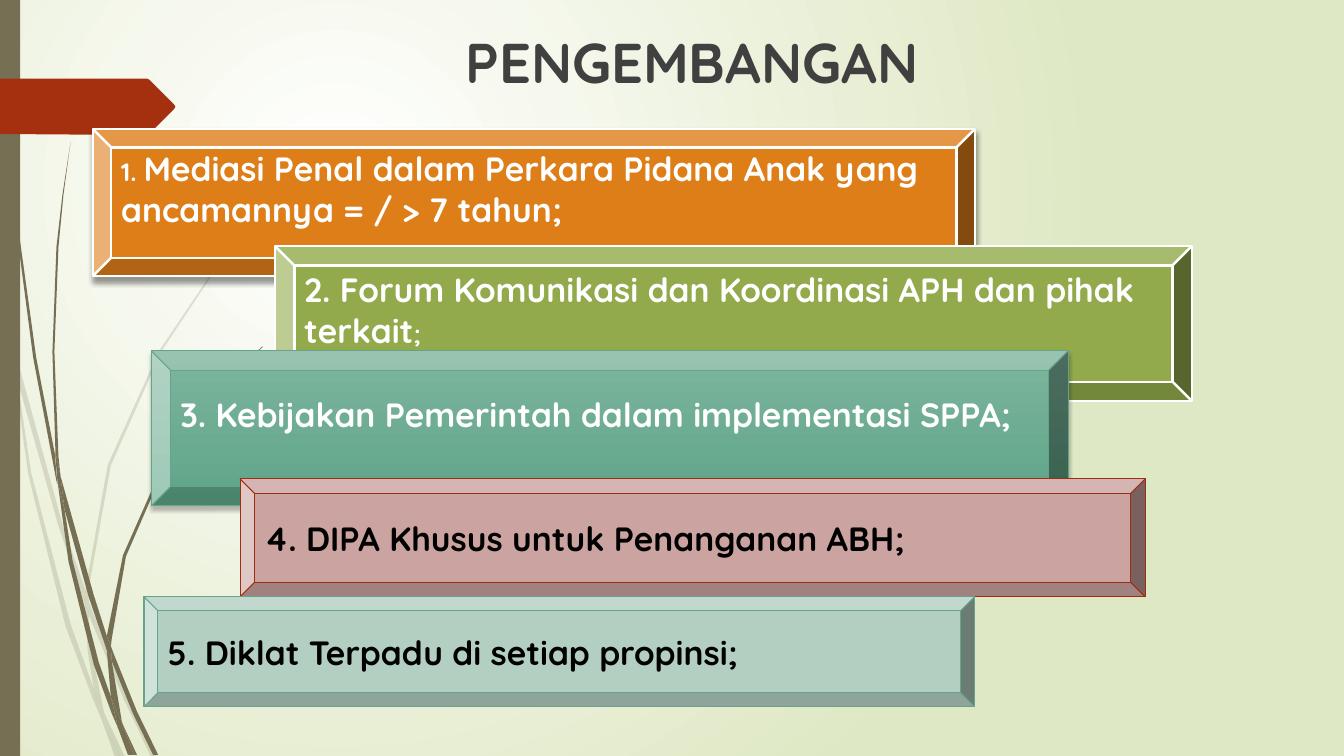
from lxml.etree import SubElement
from pptx import Presentation
from pptx.dml.color import RGBColor
from pptx.enum.shapes import MSO_SHAPE as Shape
from pptx.enum.text import MSO_ANCHOR as Anchor, PP_ALIGN as Align
from pptx.oxml.ns import qn
from pptx.util import Cm, Pt

FONT = "Quicksand"
TITLE = "PENGEMBANGAN"
COLORS = {
    "white": "FFFFFF", "black": "000000", "title": "404040", "back": "DFE8C4",
    "stem": "766F54", "tag": "A53010", "orange": "DE7E18", "olive": "92AA4C",
    "teal_top": "7DB59D", "teal_bottom": "5EA588", "teal_line": "65A48B",
    "rose": "CBA3A0", "rose_line": "9E2E0F", "mint": "B3CFC2",
}
BARS = [
    {"box": (2.34, 3.25, 22.23, 3.71), "fill": ["orange"], "line": ("white", 1.75),
     "color": "white", "bottom": 0.7, "shadow": (40, 4, 3),
     "runs": [("1. ", 18), ("Mediasi Penal dalam Perkara Pidana Anak yang ancamannya = / > 7 tahun;", 24)]},
    {"box": (6.93, 6.2, 23.11, 3.91), "fill": ["olive"], "line": ("white", 1.75),
     "color": "white", "bottom": 0.7, "shadow": None,
     "runs": [("2. Forum Komunikasi dan Koordinasi APH dan pihak terkait", 24), (";", 18)]},
    {"box": (3.81, 8.84, 23.11, 3.91), "fill": ["teal_top", "teal_bottom"], "line": ("teal_line", 0.75),
     "color": "white", "bottom": 0.7, "shadow": (25, 3, 2),
     "runs": [("3. Kebijakan Pemerintah dalam implementasi SPPA;", 24)]},
    {"box": (6.05, 12.07, 22.81, 2.97), "fill": ["rose"], "line": ("rose_line", 0.75),
     "color": "black", "bottom": 0, "shadow": None,
     "runs": [("4. DIPA Khusus untuk Penanganan ABH;", 24)]},
    {"box": (3.63, 15.04, 20.93, 2.77), "fill": ["mint"], "line": ("teal_line", 0.75),
     "color": "black", "bottom": 0, "shadow": None,
     "runs": [("5. Diklat Terpadu di setiap propinsi;", 24)]},
]
OUTLINE_UNIT = Cm(0.0254)
PALE_STEMS = [
    [(11, 350), (9, 322), (0, 282), (0, 299), (10, 344)],
    [(58, 522), (84, 599), (85, 586), (62, 520), (14, 345), (17, 376)],
    [(92, 607), (88, 596), (88, 610), (123, 694), (150, 751), (155, 751), (127, 692)],
    [(119, 751), (124, 751), (105, 711)],
    [(93, 683), (70, 619), (31, 469), (17, 376), (11, 350), (28, 470), (65, 621),
     (92, 693), (101, 714), (99, 707)],
    [(84, 599), (87, 646), (93, 683), (96, 692), (105, 711), (103, 706), (91, 646),
     (88, 610), (88, 608)],
    [(88, 584), (110, 462), (160, 349), (229, 245), (268, 198), (290, 175), (312, 154),
     (312, 153), (289, 175), (268, 197), (228, 244), (158, 348), (107, 461), (85, 584),
     (85, 586), (88, 596)],
    [(101, 714), (114, 751), (119, 751)],
    [(88, 608), (88, 610), (88, 596), (85, 586), (84, 599)],
    [(96, 692), (93, 683), (99, 707), (101, 714), (119, 751), (105, 711)],
]
DARK_STEMS = [
    [(7, 110), (17, 233), (33, 355), (56, 477), (57, 481), (55, 457), (55, 453), (36, 355),
     (19, 232), (8, 109), (5, 48), (4, 0), (3, 0), (4, 48)],
    [(88, 592), (106, 645), (106, 633), (106, 631), (93, 590), (60, 472), (64, 505)],
    [(113, 649), (110, 641), (111, 656), (132, 708), (152, 749), (157, 749), (136, 706)],
    [(110, 691), (98, 657), (72, 556), (64, 505), (57, 477), (68, 557), (93, 659),
     (111, 708), (117, 722), (116, 717)],
    [(60, 472), (58, 453), (54, 349), (58, 245), (63, 193), (70, 141), (62, 193), (56, 245),
     (52, 349), (55, 449)],
    [(133, 749), (136, 749), (122, 719)],
    [(57, 477), (64, 505), (60, 472), (55, 449), (55, 453)],
    [(111, 633), (125, 552), (158, 476), (205, 406), (231, 374), (245, 359), (261, 344),
     (260, 344), (245, 358), (231, 373), (204, 405), (156, 474), (122, 551), (106, 631),
     (110, 641)],
    [(117, 722), (127, 749), (131, 749)],
    [(106, 645), (110, 691), (116, 706), (122, 719), (121, 716), (111, 656), (109, 651)],
    [(106, 645), (109, 651), (111, 656), (110, 641), (106, 631), (106, 633)],
    [(116, 706), (110, 691), (116, 717), (117, 722), (130, 749), (133, 749), (122, 719)],
]
TAG = [(173, 108), (148, 133), (146, 134), (136, 134), (0, 133), (0, 78), (136, 78),
       (146, 78), (148, 79), (173, 104), (174, 106)]


def rgb(name):
    return RGBColor.from_string(COLORS[name])


def paint(fill, names):
    if len(names) == 1:
        fill.solid()
        fill.fore_color.rgb = rgb(names[0])
    else:
        fill.gradient()
        for stop, name in zip(fill.gradient_stops, names):
            stop.color.rgb = rgb(name)


def set_background(slide):
    paint(slide.background.fill, ["white", "back"])
    gradient = slide.element.find(".//" + qn("a:gradFill"))
    gradient.remove(gradient.find(qn("a:lin")))
    circle = SubElement(gradient, qn("a:path"), path="circle")
    SubElement(circle, qn("a:fillToRect"), l="50000", t="50000", r="100000", b="100000")


def finish_plain(shape, color):
    shape.shadow.inherit = False
    paint(shape.fill, [color])
    shape.line.fill.background()


def add_outline(slide, points, color, opacity=100):
    builder = slide.shapes.build_freeform(*points[0], scale=OUTLINE_UNIT)
    builder.add_line_segments(points[1:], close=True)
    shape = builder.convert_to_shape()
    finish_plain(shape, color)
    if opacity < 100:
        tint = shape.element.spPr.find(".//" + qn("a:srgbClr"))
        SubElement(tint, qn("a:alpha"), val=str(opacity * 1000))


def write(paragraph, runs, color):
    for text, size in runs:
        run = paragraph.add_run()
        run.text = text
        run.font.name, run.font.size, run.font.bold = FONT, Pt(size), True
        run.font.color.rgb = rgb(color)


def add_shadow(shape, opacity, blur, distance):
    effects = shape.element.spPr.find(qn("a:effectLst"))
    outer = SubElement(effects, qn("a:outerShdw"), blurRad=str(Pt(blur)),
                       dist=str(Pt(distance)), dir="5400000", rotWithShape="0")
    tint = SubElement(outer, qn("a:srgbClr"), val=COLORS["black"])
    SubElement(tint, qn("a:alpha"), val=str(opacity * 1000))


def add_bar(slide, bar):
    shape = slide.shapes.add_shape(Shape.BEVEL, *map(Cm, bar["box"]))
    shape.shadow.inherit = False
    paint(shape.fill, bar["fill"])
    if len(bar["fill"]) > 1:
        shape.fill.gradient_angle = 270
    line_color, width = bar["line"]
    shape.line.color.rgb = rgb(line_color)
    shape.line.width = Pt(width)
    if bar["shadow"]:
        add_shadow(shape, *bar["shadow"])
    frame = shape.text_frame
    frame.word_wrap = True
    frame.vertical_anchor = Anchor.MIDDLE
    frame.margin_top, frame.margin_bottom = Cm(0), Cm(bar["bottom"])
    frame.paragraphs[0].alignment = Align.LEFT
    write(frame.paragraphs[0], bar["runs"], bar["color"])


def main():
    """Build the slide of five overlapping development points."""
    presentation = Presentation()
    presentation.slide_width, presentation.slide_height = Cm(33.87), Cm(19.05)
    slide = presentation.slides.add_slide(presentation.slide_layouts[6])
    set_background(slide)
    for points in PALE_STEMS:
        add_outline(slide, points, "stem", 20)
    for points in DARK_STEMS:
        add_outline(slide, points, "stem")
    side = slide.shapes.add_shape(Shape.RECTANGLE, 0, 0, Cm(0.51), Cm(19.05))
    finish_plain(side, "stem")
    add_outline(slide, TAG, "tag")

    title = slide.shapes.add_textbox(Cm(4.62), Cm(0.56), Cm(25.63), Cm(2.69)).text_frame
    title.word_wrap = True
    title.paragraphs[0].alignment = Align.CENTER
    write(title.paragraphs[0], [(TITLE, 40)], "title")
    for bar in BARS:
        add_bar(slide, bar)
    presentation.save("out.pptx")


if __name__ == "__main__":
    main()
